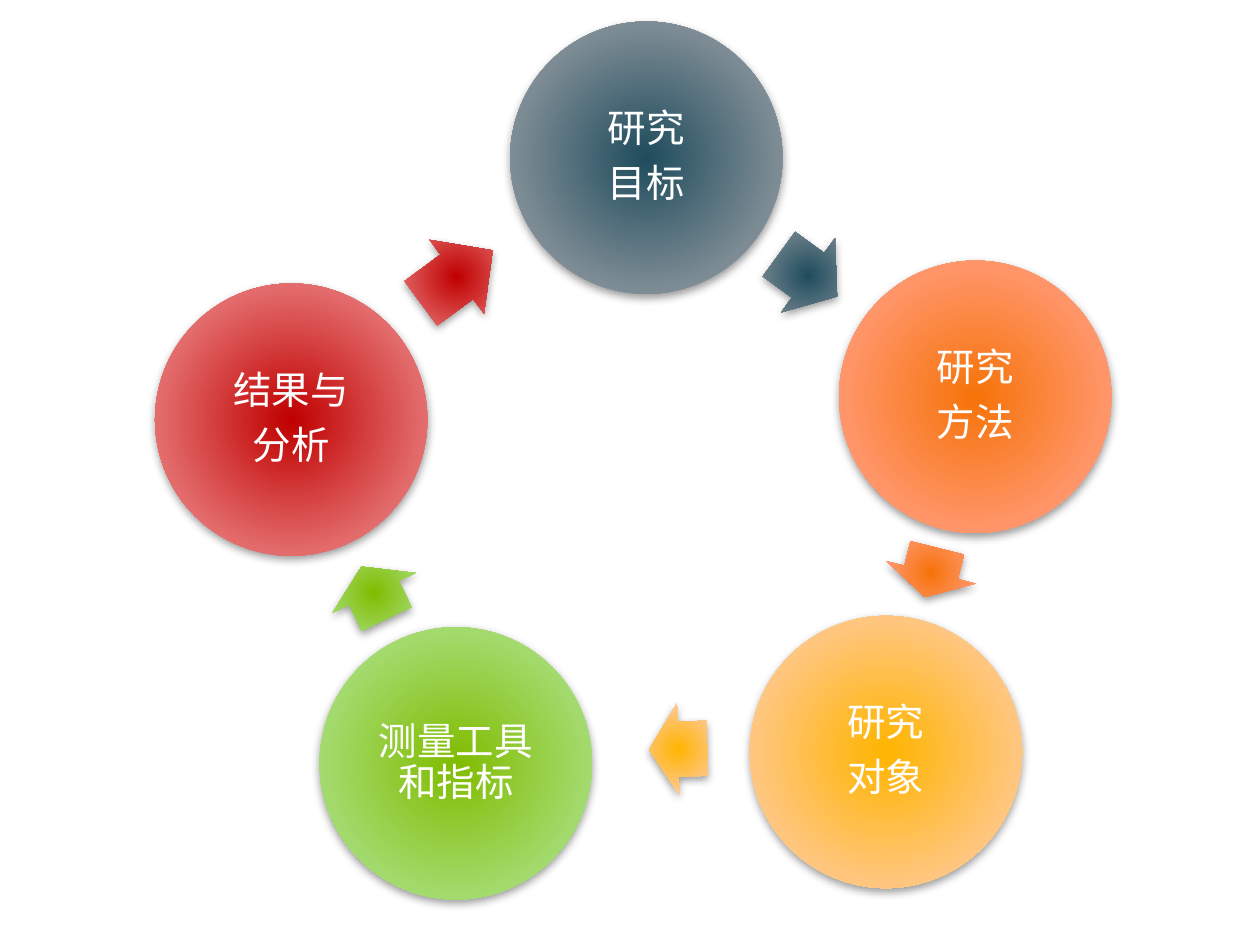
from dataclasses import dataclass
from math import atan2, degrees

from lxml.etree import SubElement
from pptx import Presentation
from pptx.dml.color import RGBColor
from pptx.enum.shapes import MSO_SHAPE as Preset
from pptx.enum.text import MSO_ANCHOR as Anchor, PP_ALIGN as Align
from pptx.oxml import parse_xml
from pptx.oxml.ns import nsdecls, qn
from pptx.util import Cm, Pt


@dataclass(frozen=True)
class Theme:
    font: str = "Arial"
    text_size: int = 22
    text_color: str = "FFFFFF"
    # Centre, middle and outer colour of each step
    blue: tuple = ("1F4C5D", "7D8C94", "BCC2C5")
    orange: tuple = ("F67309", "FF9569", "FEC3B0")
    amber: tuple = ("FFB400", "FFC67F", "FFDEBD")
    green: tuple = ("80BC00", "A3DA6D", "CBE7B4")
    red: tuple = ("C00000", "E36B6B", "ECB3B3")


@dataclass(frozen=True)
class Step:
    lines: tuple
    colors: tuple
    center: tuple        # circle centre in cm, from the cycle's corner
    arrow_center: tuple
    arrow_length: float


THEME = Theme()
CIRCLE = 5.49
ARROW_WIDTH = 1.85
CYCLE_CORNER = (3.12, 0.43)
STOPS = (0, 69, 100)

STEPS = (
    Step(("研究", "目标"), THEME.blue, (9.91, 2.75), (13.17, 5.12), 1.45),
    Step(("研究", "方法"), THEME.orange, (16.54, 7.57), (15.65, 11.11), 1.02),
    Step(("研究", "对象"), THEME.amber, (14.74, 14.73), (10.55, 14.67), 1.17),
    Step(("测量工具和指标",), THEME.green, (6.07, 14.96), (4.42, 11.52), 1.17),
    Step(("结果与", "分析"), THEME.red, (2.75, 8.03), (6.09, 5.15), 1.8),
)


def style_shape(shape, colors):
    """Radial gradient, no outline, soft shadow below."""
    shape.line.fill.background()
    shape.fill.background()
    stops = "".join(
        f'<a:gs pos="{stop * 1000}"><a:srgbClr val="{color}"/></a:gs>'
        for stop, color in zip(STOPS, colors))
    gradient = parse_xml(
        f'<a:gradFill {nsdecls("a")} rotWithShape="1"><a:gsLst>{stops}</a:gsLst>'
        '<a:path path="circle"><a:fillToRect l="100000" t="100000" '
        'r="100000" b="100000"/></a:path></a:gradFill>')
    properties = shape.element.spPr
    properties.replace(properties.find(qn("a:noFill")), gradient)
    properties.append(parse_xml(
        f'<a:effectLst {nsdecls("a")}><a:outerShdw blurRad="{Pt(5)}" '
        f'dist="{Pt(2)}" dir="5400000" rotWithShape="0"><a:srgbClr val="000000">'
        '<a:alpha val="40000"/></a:srgbClr></a:outerShdw></a:effectLst>'))


def add_centered(slide, preset, corner, center, size, colors):
    left, top = (c + p - s / 2 for c, p, s in zip(corner, center, size))
    shape = slide.shapes.add_shape(
        preset, Cm(left), Cm(top), Cm(size[0]), Cm(size[1]))
    style_shape(shape, colors)
    return shape


def write_label(circle, lines):
    frame = circle.text_frame
    frame.text = "\n".join(lines)
    settings = {"word_wrap": True, "vertical_anchor": Anchor.MIDDLE}
    settings |= {f"margin_{side}": Cm(0.08)
                 for side in ("left", "top", "right", "bottom")}
    for name, value in settings.items():
        setattr(frame, name, value)
    for line in frame.paragraphs:
        line.alignment = Align.CENTER
        line.line_spacing = 0.9
        # Space after, as a share of the line
        after = SubElement(line._p.get_or_add_pPr(), qn("a:spcAft"))
        SubElement(after, qn("a:spcPct")).set("val", "35000")
        for run in line.runs:
            run.font.name = THEME.font
            run.font.size = Pt(THEME.text_size)
            run.font.color.rgb = RGBColor.from_string(THEME.text_color)


def add_cycle(slide, corner, steps):
    for step, following in zip(steps, steps[1:] + steps[:1]):
        # Circle with its label
        circle = add_centered(slide, Preset.OVAL, corner, step.center,
                              (CIRCLE, CIRCLE), step.colors)
        write_label(circle, step.lines)
        # Arrow turned towards the following circle
        arrow = add_centered(slide, Preset.RIGHT_ARROW, corner, step.arrow_center,
                             (step.arrow_length, ARROW_WIDTH), step.colors)
        arrow.adjustments[0] = 0.6
        arrow.adjustments[1] = 0.5
        across, down = (b - a for a, b in zip(step.center, following.center))
        arrow.rotation = round(degrees(atan2(down, across)) % 360, 1)


def main():
    deck = Presentation()
    deck.slide_width, deck.slide_height = Cm(25.4), Cm(19.05)
    slide = deck.slides.add_slide(deck.slide_layouts[6])
    add_cycle(slide, CYCLE_CORNER, STEPS)
    deck.save("out.pptx")


if __name__ == "__main__":
    main()
